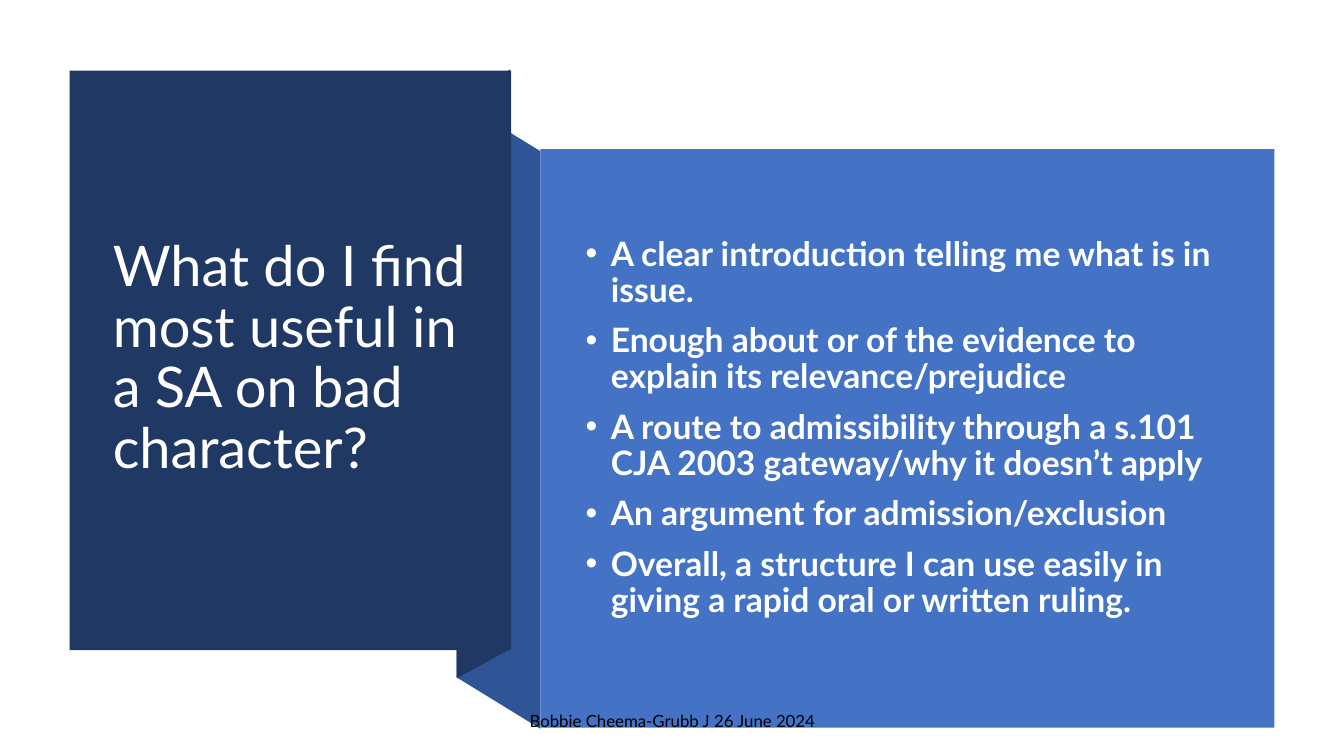
import pptx
import pptx.dml.color
import pptx.enum.shapes
import pptx.enum.text
import pptx.oxml
import pptx.util
from pptx.util import Inches

PP_ALIGN = pptx.enum.text.PP_ALIGN
NAVY, FOLD, BLUE = "203864", "2F5597", "4472C4"

POINTS = [
    "A clear introduction telling me what is in issue.",
    "Enough about or of the evidence to explain its relevance/prejudice",
    "A route to admissibility through a s.101 CJA 2003 gateway/why it doesn’t apply",
    "An argument for admission/exclusion",
    "Overall, a structure I can use easily in giving a rapid oral or written ruling.",
]


def rgb(color):
    return pptx.dml.color.RGBColor.from_string(color)


def add_bullet(p, indent=0.25):
    """Give the paragraph a round bullet with a hanging indent."""
    pPr = p._p.get_or_add_pPr()
    pPr.set("marL", str(Inches(indent)))
    pPr.set("indent", str(-Inches(indent)))
    for tag, attr, value in (("a:buFont", "typeface", "Arial"), ("a:buChar", "char", "•")):
        bu = pptx.oxml.xmlchemy.OxmlElement(tag)
        bu.set(attr, value)
        pPr.append(bu)


class SlideBuilder:
    """Holds the font and the current slide."""

    def __init__(self, slide, font="Lato"):
        self.s = slide
        self.font = font

    def paint(self, sp, color):
        sp.shadow.inherit = False
        sp.fill.solid()
        sp.fill.fore_color.rgb = rgb(color)
        sp.line.fill.background()

    def rect(self, x, y, w, h, color):
        sp = self.s.shapes.add_shape(
            pptx.enum.shapes.MSO_SHAPE.RECTANGLE,
            Inches(x), Inches(y), Inches(w), Inches(h))
        self.paint(sp, color)

    def polygon(self, points, color):
        start, *rest = [(Inches(x), Inches(y)) for x, y in points]
        fb = self.s.shapes.build_freeform(*start, scale=1.0)
        fb.add_line_segments(rest, close=True)
        self.paint(fb.convert_to_shape(), color)

    def text(self, x, y, w, h, lines, size, color, bold=False, bullet=False,
             align=PP_ALIGN.LEFT, spacing=1.0, before=0):
        tb = self.s.shapes.add_textbox(Inches(x), Inches(y), Inches(w), Inches(h))
        tf = tb.text_frame
        tf.word_wrap = True
        tf.vertical_anchor = pptx.enum.text.MSO_ANCHOR.MIDDLE
        for i, line in enumerate(lines):
            p = tf.add_paragraph() if i else tf.paragraphs[0]
            p.alignment = align
            p.line_spacing = spacing
            p.space_before = pptx.util.Pt(before)
            if bullet:
                add_bullet(p)
            r = p.add_run()
            r.text = line
            r.font.name = self.font
            r.font.size = pptx.util.Pt(size)
            r.font.bold = bold
            r.font.color.rgb = rgb(color)


def main():
    prs = pptx.Presentation()
    prs.slide_width, prs.slide_height = Inches(13.33), Inches(7.5)
    b = SlideBuilder(prs.slides.add_slide(prs.slide_layouts[6]))

    b.polygon([(5.36, 7.23), (4.53, 6.72), (4.53, 0.99), (5.36, 1.5)], FOLD)
    b.polygon([(5.06, 6.44), (4.53, 6.73), (4.53, 0.98), (5.06, 0.69)], NAVY)
    b.rect(0.69, 0.7, 4.38, 5.75, NAVY)
    b.text(1.02, 1.07, 3.71, 4.99, ["What do I find most useful in a SA on bad character?"],
           40, "FFFFFF", spacing=0.9)

    b.rect(5.36, 1.48, 7.28, 5.74, BLUE)
    b.text(5.71, 1.88, 6.51, 4.74, POINTS, 24, "FEFFFF", bold=True, bullet=True,
           spacing=0.9, before=10)

    b.text(4.42, 6.95, 4.5, 0.4, ["Bobbie Cheema-Grubb J 26 June 2024"], 12, "000000",
           align=PP_ALIGN.CENTER)
    prs.save("out.pptx")


if __name__ == "__main__":
    main()
